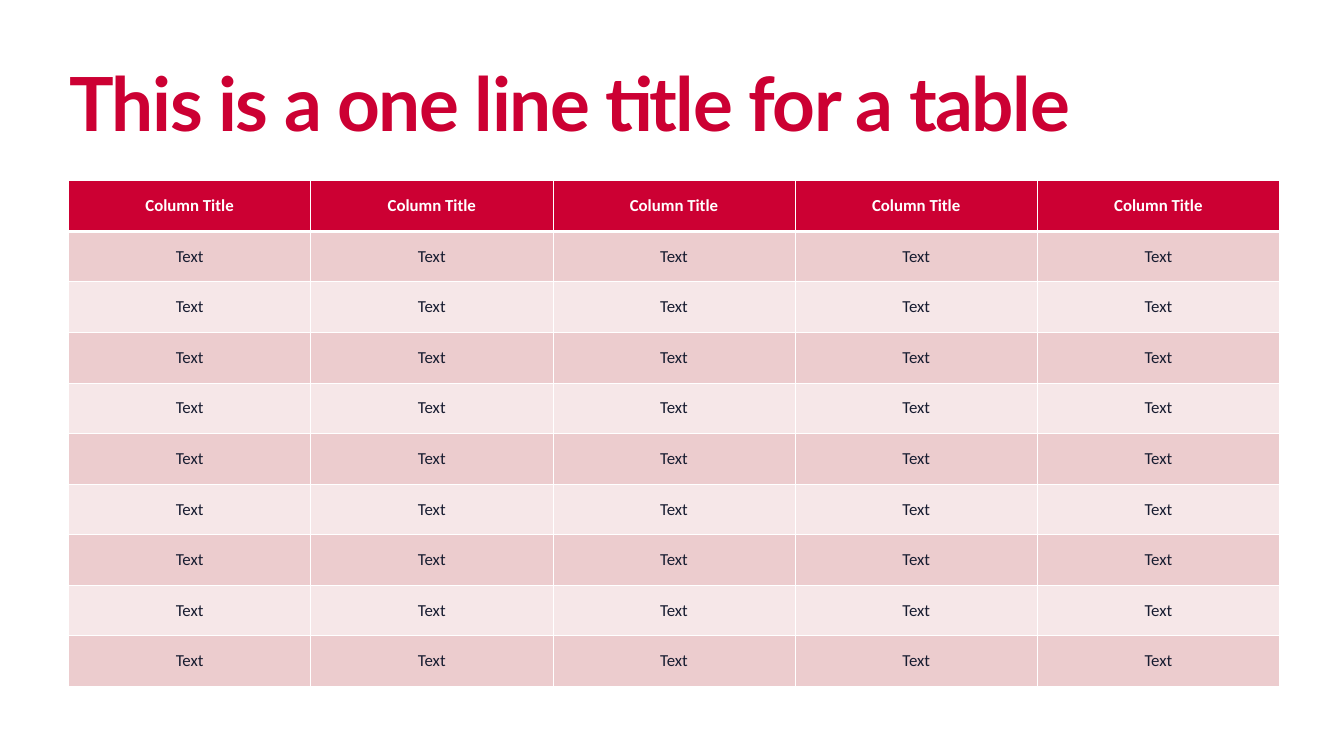
from lxml import etree
from pptx import Presentation
from pptx.dml.color import RGBColor
from pptx.enum.text import MSO_ANCHOR, PP_ALIGN
from pptx.oxml.ns import qn
from pptx.util import Inches, Pt

CENTER = PP_ALIGN.CENTER
TOP = MSO_ANCHOR.TOP
MIDDLE = MSO_ANCHOR.MIDDLE

RED = RGBColor(0xCC, 0x00, 0x33)
WHITE = RGBColor(0xFF, 0xFF, 0xFF)
NAVY = RGBColor(0x17, 0x1C, 0x30)
BANDS = (RGBColor(0xEC, 0xCC, 0xCE), RGBColor(0xF6, 0xE7, 0xE8))

TITLE = "This is a one line title for a table"
COLUMNS = 5
BODY_ROWS = 9
ROWS = [["Column Title"] * COLUMNS] + [["Text"] * COLUMNS for _ in range(BODY_ROWS)]

TABLE_LEFT, TABLE_TOP = 1.02, 2.69
TABLE_WIDTH, TABLE_HEIGHT = 18.02, 7.52


def add_run(p, text, font, size, color, bold):
    r = p.add_run()
    r.text = text
    r.font.name = font
    r.font.size = Pt(size)
    r.font.color.rgb = color
    r.font.bold = bold
    return r


def add_title(slide):
    sp = slide.shapes.add_textbox(Inches(1.03), Inches(1.04), Inches(18.01), Inches(1.1))
    tf = sp.text_frame
    tf.word_wrap = True
    tf.vertical_anchor = TOP
    tf.margin_left = tf.margin_top = tf.margin_right = tf.margin_bottom = 0
    p = tf.paragraphs[0]
    p.line_spacing = Pt(82)
    r = add_run(p, TITLE, "Lato", 80, RED, True)
    r.font._element.set("spc", "-150")


def set_borders(cell, widths):
    tcPr = cell._tc.get_or_add_tcPr()
    for side, width in widths.items():
        ln = etree.SubElement(tcPr, qn(f"a:ln{side}"), w=str(Pt(width)))
        fill = etree.SubElement(ln, qn("a:solidFill"))
        etree.SubElement(fill, qn("a:srgbClr"), val=str(WHITE))


def add_table(slide):
    frame = slide.shapes.add_table(
        len(ROWS), COLUMNS, Inches(TABLE_LEFT), Inches(TABLE_TOP),
        Inches(TABLE_WIDTH), Inches(TABLE_HEIGHT))
    table = frame.table
    for column in table.columns:
        column.width = Inches(TABLE_WIDTH / COLUMNS)
    for i, texts in enumerate(ROWS):
        header = i == 0
        table.rows[i].height = Inches(TABLE_HEIGHT / len(ROWS))
        borders = {"L": 1, "R": 1, "T": 3 if i == 1 else 1, "B": 3 if header else 1}
        for j, text in enumerate(texts):
            cell = table.cell(i, j)
            set_borders(cell, borders)
            cell.fill.solid()
            cell.fill.fore_color.rgb = RED if header else BANDS[(i - 1) % 2]
            cell.vertical_anchor = MIDDLE
            p = cell.text_frame.paragraphs[0]
            p.alignment = CENTER
            add_run(p, text, "Calibri", 18, WHITE if header else NAVY, header)


def main():
    prs = Presentation()
    prs.slide_width = Inches(20)
    prs.slide_height = Inches(11.25)
    s = prs.slides.add_slide(prs.slide_layouts[6])
    add_title(s)
    add_table(s)
    prs.save("out.pptx")


if __name__ == "__main__":
    main()
